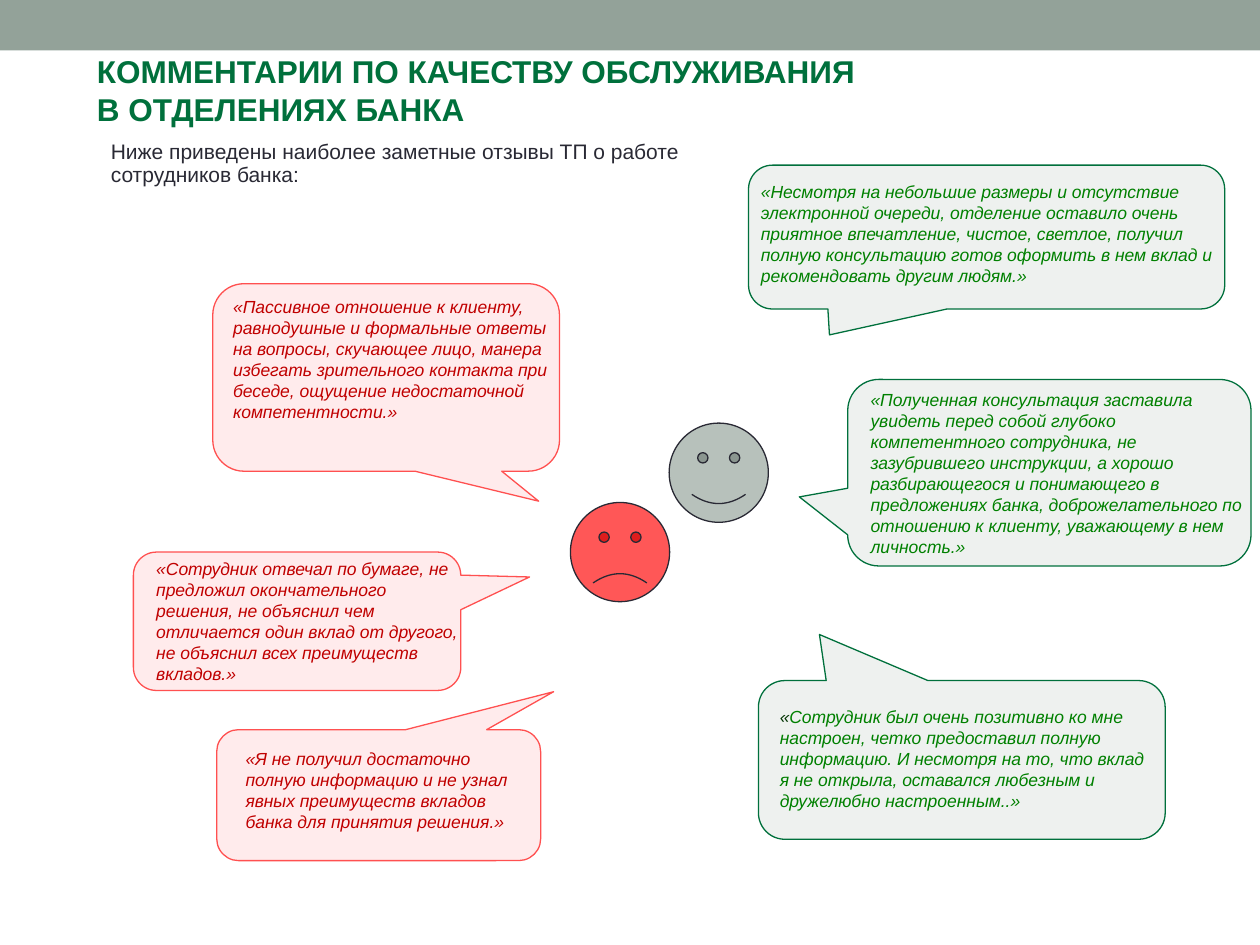
from dataclasses import dataclass
from typing import Any

import lxml.etree
import pptx
import pptx.dml.color
import pptx.enum.shapes
import pptx.enum.text
import pptx.oxml.ns
import pptx.util

Cm = pptx.util.Cm
SHAPE = pptx.enum.shapes.MSO_SHAPE
Box = tuple[float, float, float, float]

HUES = {
    "sage": "93A299", "title": "00703C", "ink": "292934",
    "good": "008000", "dark": "003300", "bad": "C00000",
    "rose": "FF7C80", "edge": "FF5050", "red": "FF0000",
}


@dataclass
class Mood:
    fill: str
    line: str
    text: str


@dataclass
class Quote:
    mood: Mood
    box: Box
    tip: tuple[float, float]
    area: Box
    text: str
    lead: str = ""


GOOD = Mood("sage", "title", "good")
BAD = Mood("rose", "edge", "bad")

QUOTES = [
    Quote(GOOD, (15.09, 3.33, 9.6, 2.9), (-0.33, 0.68), (15.09, 3.53, 9.8, 2.39),
          "«Несмотря на небольшие размеры и отсутствие электронной очереди, "
          "отделение оставило очень приятное впечатление, чистое, светлое, "
          "получил полную консультацию готов оформить в нем вклад и "
          "рекомендовать другим людям.»"),
    Quote(GOOD, (17.09, 7.65, 8.13, 3.76), (-0.62, 0.13), (17.3, 7.72, 8.1, 3.68),
          "«Полученная консультация заставила увидеть перед собой глубоко "
          "компетентного сотрудника, не зазубрившего инструкции, а хорошо "
          "разбирающегося и понимающего в предложениях банка, "
          "доброжелательного по отношению к клиенту, уважающему в нем "
          "личность.»"),
    Quote(GOOD, (15.29, 13.72, 8.2, 3.2), (-0.35, -0.79), (15.47, 14.1, 8.1, 2.39),
          "Сотрудник был очень позитивно ко мне настроен, четко предоставил "
          "полную информацию. И несмотря на то, что вклад я не открыла, "
          "оставался любезным и дружелюбно настроенным..»", lead="«"),
    Quote(BAD, (4.29, 5.72, 6.99, 3.78), (0.44, 0.66), (4.45, 5.84, 6.86, 2.82),
          "«Пассивное отношение к клиенту, равнодушные и формальные ответы на "
          "вопросы, скучающее лицо, манера избегать зрительного контакта при "
          "беседе, ощущение недостаточной компетентности.»"),
    Quote(BAD, (2.69, 11.13, 6.6, 2.79), (0.71, -0.32), (2.9, 11.13, 6.6, 2.82),
          "«Сотрудник отвечал по бумаге, не предложил окончательного решения, "
          "не объяснил чем отличается один вклад от другого, не объяснил всех "
          "преимуществ вкладов.»"),
    Quote(BAD, (4.37, 14.71, 6.53, 2.64), (0.54, -0.79), (4.7, 14.96, 5.99, 1.96),
          "«Я не получил достаточно полную информацию и не узнал явных "
          "преимуществ вкладов банка для принятия решения.»"),
]


def hue(name: str) -> pptx.dml.color.RGBColor:
    return pptx.dml.color.RGBColor.from_string(HUES[name])


def place(shape: Any, box: Box) -> None:
    shape.left, shape.top, shape.width, shape.height = map(Cm, box)


def write(shape: Any, text: str, *, size: float, color: str, bold: bool = False,
          slant: bool = False, lead: str = "", space: float = 1.0,
          mid: bool = False) -> None:
    """Fill a shape with one unbulleted paragraph per line, after a dark lead."""
    frame = shape.text_frame
    frame.word_wrap = True
    frame.auto_size = pptx.enum.text.MSO_AUTO_SIZE.NONE
    anchor = pptx.enum.text.MSO_ANCHOR
    frame.vertical_anchor = anchor.MIDDLE if mid else anchor.TOP
    for i, line in enumerate(text.split("\n")):
        para = frame.add_paragraph() if i else frame.paragraphs[0]
        props = para._p.get_or_add_pPr()
        props.set("marL", "0")
        props.set("indent", "0")
        lxml.etree.SubElement(props, pptx.oxml.ns.qn("a:buNone"))
        para.alignment = pptx.enum.text.PP_ALIGN.LEFT
        para.space_before = pptx.util.Pt(0)
        para.line_spacing = space
        for part, tint in ((lead, "dark"), (line, color)):
            if part:
                run = para.add_run()
                run.text = part
                font = run.font
                font.name, font.size = "Arial", pptx.util.Pt(size)
                font.bold, font.italic = bold, slant
                font.color.rgb = hue(tint)


def draw(slide: Any, kind: Any, box: Box, fill: str, line: str = "",
         alpha: int = 100, adj: tuple[float, ...] = ()) -> None:
    shape = slide.shapes.add_shape(kind, *map(Cm, box))
    shape.shadow.inherit = False
    shape.fill.solid()
    shape.fill.fore_color.rgb = hue(fill)
    if alpha < 100:
        tint = shape._element.spPr.find(".//" + pptx.oxml.ns.qn("a:srgbClr"))
        node = lxml.etree.SubElement(tint, pptx.oxml.ns.qn("a:alpha"))
        node.set("val", str(alpha * 1000))
    if line:
        shape.line.color.rgb = hue(line)
        shape.line.width = pptx.util.Pt(0.75)
    else:
        shape.line.fill.background()
    for i, value in enumerate(adj):
        shape.adjustments[i] = value


def quote(slide: Any, item: Quote) -> None:
    mood = item.mood
    draw(slide, SHAPE.ROUNDED_RECTANGULAR_CALLOUT, item.box, mood.fill,
         mood.line, alpha=15, adj=item.tip)
    label = slide.shapes.add_textbox(*map(Cm, item.area))
    write(label, item.text, size=10, color=mood.text, slant=True, lead=item.lead)


def main() -> None:
    deck = pptx.Presentation()
    deck.slide_width, deck.slide_height = Cm(25.4), Cm(19.05)
    slide = deck.slides.add_slide(deck.slide_layouts[1])
    title, intro = slide.placeholders

    draw(slide, SHAPE.RECTANGLE, (0, 0, 25.4, 1.02), "sage")
    place(title, (1.7, 0.91, 19.3, 1.8))
    write(title, "КОММЕНТАРИИ ПО КАЧЕСТВУ ОБСЛУЖИВАНИЯ\nВ ОТДЕЛЕНИЯХ БАНКА",
          size=18, color="title", bold=True, mid=True)
    place(intro, (1.98, 2.72, 12.12, 1.17))
    write(intro, "Ниже приведены наиболее заметные отзывы ТП о работе "
          "сотрудников банка:", size=12, color="ink", space=0.9)

    draw(slide, SHAPE.SMILEY_FACE, (13.49, 8.53, 2, 2), "sage", "ink", alpha=66)
    draw(slide, SHAPE.SMILEY_FACE, (11.5, 10.13, 2, 2), "red", "ink", alpha=66,
         adj=(-0.05,))
    for item in QUOTES:
        quote(slide, item)

    deck.save("out.pptx")


if __name__ == "__main__":
    main()
